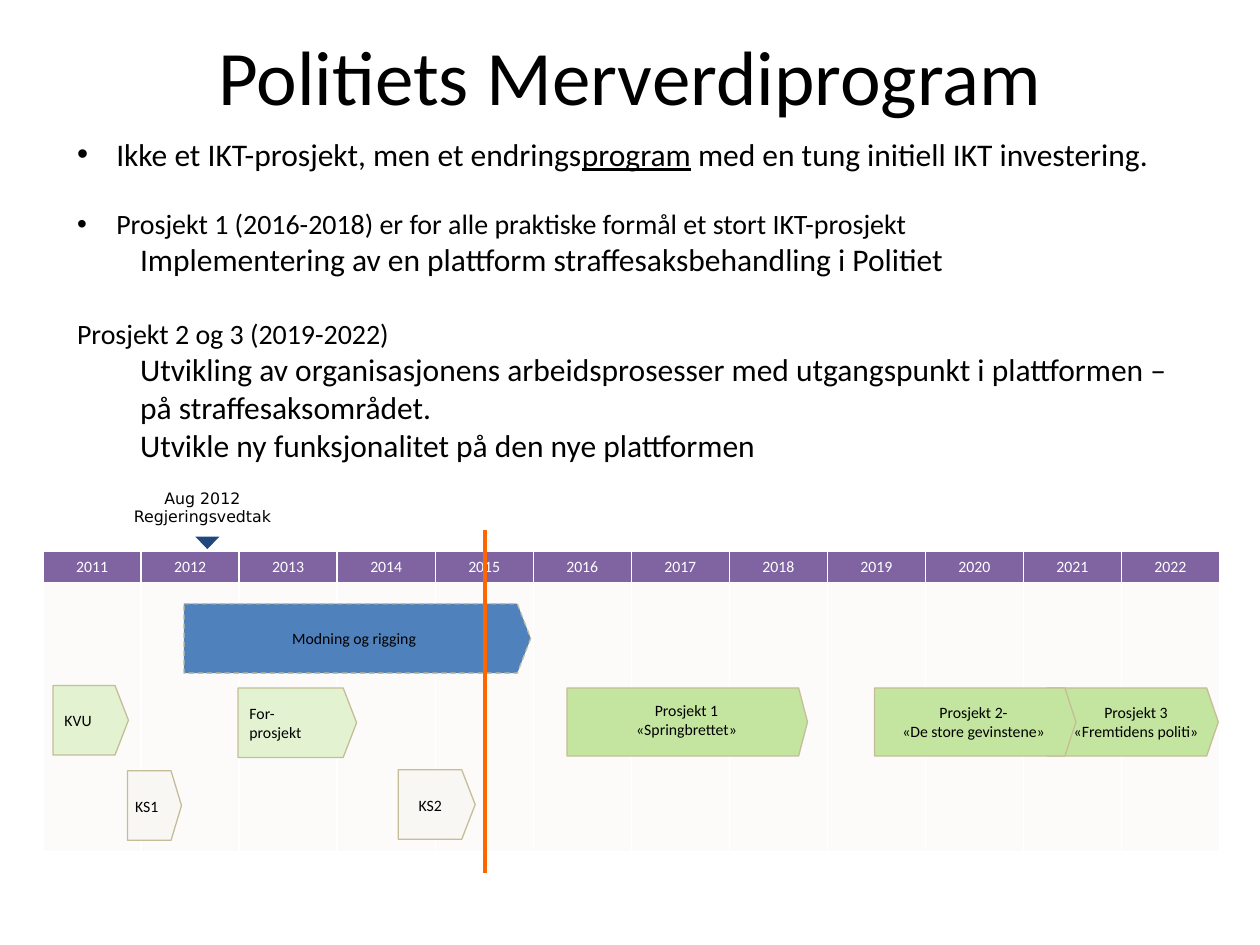
"""Build the Politiets Merverdiprogram slide with its 2011-2022 timeline."""
from lxml.etree import SubElement
from pptx import Presentation
from pptx.dml.color import RGBColor
from pptx.enum.dml import MSO_LINE
from pptx.enum.shapes import MSO_CONNECTOR, MSO_SHAPE
from pptx.enum.text import MSO_ANCHOR, MSO_AUTO_SIZE, PP_ALIGN
from pptx.oxml.ns import qn
from pptx.util import Cm, Pt


def rgb(value):
    return RGBColor.from_string(value)


def write(tf, text, size=9, color="000000", font="Calibri", align=PP_ALIGN.CENTER, before=0):
    """Add one paragraph per line; words between underscores are underlined."""
    for line in text.split("\n"):
        p = tf.add_paragraph() if tf.text else tf.paragraphs[0]
        p.alignment = align
        p.space_before = Pt(before)
        for i, part in enumerate(line.split("_")):
            r = p.add_run()
            r.text = part
            r.font.name, r.font.size, r.font.bold = font, Pt(size), False
            r.font.underline = i % 2 == 1
            r.font.color.rgb = rgb(color)
    return p


prs = Presentation()
prs.slide_width, prs.slide_height = Cm(25.4), Cm(19.05)
s = prs.slides.add_slide(prs.slide_layouts[1])

title, body = s.placeholders
title.left, title.top, title.width, title.height = Cm(1.27), Cm(-0.08), Cm(22.86), Cm(3.18)
title.text_frame.vertical_anchor = MSO_ANCHOR.MIDDLE
write(title.text_frame, "Politiets Merverdiprogram", size=44)

body.left, body.top, body.width, body.height = Cm(1.3), Cm(2.59), Cm(22.61), Cm(6.93)
tf = body.text_frame
tf.auto_size = MSO_AUTO_SIZE.NONE
items = [
    ("Ikke et IKT-prosjekt, men et endrings_program_ med en tung initiell IKT investering.", 18, "bullet", 0),
    ("Prosjekt 1 (2016-2018) er for alle praktiske formål et stort IKT-prosjekt", 16, "bullet", 19.5),
    ("Implementering av en plattform straffesaksbehandling i Politiet", 18, "sub", 0),
    ("Prosjekt 2 og 3 (2019-2022)", 16, "plain", 22),
    ("Utvikling av organisasjonens arbeidsprosesser med utgangspunkt i plattformen – på straffesaksområdet.",
     18, "sub", 0),
    ("Utvikle ny funksjonalitet på den nye plattformen", 18, "sub", 0),
]
indents = {"bullet": (0.79, -0.79), "sub": (1.27, 0), "plain": (0, 0)}
for text, size, kind, before in items:
    p = write(tf, text, size=size, align=PP_ALIGN.LEFT, before=before)
    p.level = 1 if kind == "sub" else 0
    pPr = p._p.get_or_add_pPr()
    margin, indent = indents[kind]
    pPr.set("marL", str(Cm(margin)))
    pPr.set("indent", str(Cm(indent)))
    if kind != "bullet":
        SubElement(pPr, qn("a:buNone"))

years = range(2011, 2023)
table = s.shapes.add_table(2, len(years), Cm(0.87), Cm(11.12), Cm(23.72), Cm(6.05)).table
table.rows[0].height, table.rows[1].height = Cm(0.62), Cm(5.43)
for col, year in enumerate(years):
    for row, fill in enumerate(("8064A2", "FCFBF9")):
        cell = table.cell(row, col)
        cell.fill.solid()
        cell.fill.fore_color.rgb = rgb(fill)
        cell.vertical_anchor = MSO_ANCHOR.MIDDLE
        cell.margin_top = cell.margin_bottom = Cm(0.11)
    write(table.cell(0, col).text_frame, str(year), color="FFFFFF")

phases = [
    (1.07, 13.82, 1.52, 1.4, 0.193, "E3F3D1", "KVU"),
    (2.57, 15.54, 1.09, 1.4, 0.193, "F8F7F3", ""),
    (8.03, 15.52, 1.55, 1.4, 0.193, "F8F7F3", ""),
    (21.11, 13.87, 3.45, 1.37, 0.17, "C4E59F", ""),
    (17.63, 13.87, 4.06, 1.37, 0.161, "C4E59F", ""),
    (11.43, 13.87, 4.85, 1.37, 0.131, "C4E59F", ""),
    (4.8, 13.87, 2.39, 1.4, 0.193, "E3F3D1", "For-\nprosjekt"),
    (3.71, 12.17, 6.99, 1.4, 0.193, "4F81BD", "Modning og rigging"),
]
for x, y, w, h, point, fill, text in phases:
    sp = s.shapes.add_shape(MSO_SHAPE.PENTAGON, Cm(x), Cm(y), Cm(w), Cm(h))
    sp.adjustments[0] = point
    sp.shadow.inherit = False
    sp.fill.solid()
    sp.fill.fore_color.rgb = rgb(fill)
    sp.line.color.rgb = rgb("C4BD97")
    sp.line.width = Pt(0.75)
    tf = sp.text_frame
    tf.margin_left = tf.margin_right = Cm(0.23)
    tf.margin_top = tf.margin_bottom = Cm(0.11)
    if text.startswith("Modning"):
        sp.line.dash_style = MSO_LINE.DASH
        write(tf, text)
    elif text:
        write(tf, text, align=PP_ALIGN.LEFT)

labels = [
    (2.49, 15.95, 0.94, 0.61, "KS1", "Calibri"),
    (8, 15.93, 1.35, 0.61, "KS2", "Calibri"),
    (12.14, 14.02, 3.4, 0.99, "Prosjekt 1\n«Springbrettet»", "Calibri"),
    (21.31, 14.05, 3.18, 0.99, "Prosjekt 3\n«Fremtidens politi»", "Calibri"),
    (17.63, 14.05, 3.99, 0.99, "Prosjekt 2-\n«De store gevinstene»", "Calibri"),
    (2.44, 9.73, 3.28, 0.99, "Aug 2012\nRegjeringsvedtak", "DejaVu Sans"),
]
for x, y, w, h, text, font in labels:
    tf = s.shapes.add_textbox(Cm(x), Cm(y), Cm(w), Cm(h)).text_frame
    tf.word_wrap = text != "KS1" and font == "Calibri"
    tf.vertical_anchor = MSO_ANCHOR.MIDDLE
    tf.margin_left = tf.margin_right = Cm(0.23)
    tf.margin_top = tf.margin_bottom = Cm(0.11)
    write(tf, text, font=font)

marker = s.shapes.add_shape(MSO_SHAPE.ISOSCELES_TRIANGLE, Cm(3.94), Cm(10.82), Cm(0.48), Cm(0.25))
marker.rotation = 180
marker.shadow.inherit = False
marker.fill.solid()
marker.fill.fore_color.rgb = rgb("1F497D")
marker.line.fill.background()

today = s.shapes.add_connector(MSO_CONNECTOR.STRAIGHT, Cm(9.78), Cm(10.69), Cm(9.78), Cm(17.6))
today.line.color.rgb = rgb("FF6600")
today.line.width = Pt(2.25)
SubElement(today._element.spPr, qn("a:effectLst"))

prs.save("out.pptx")
